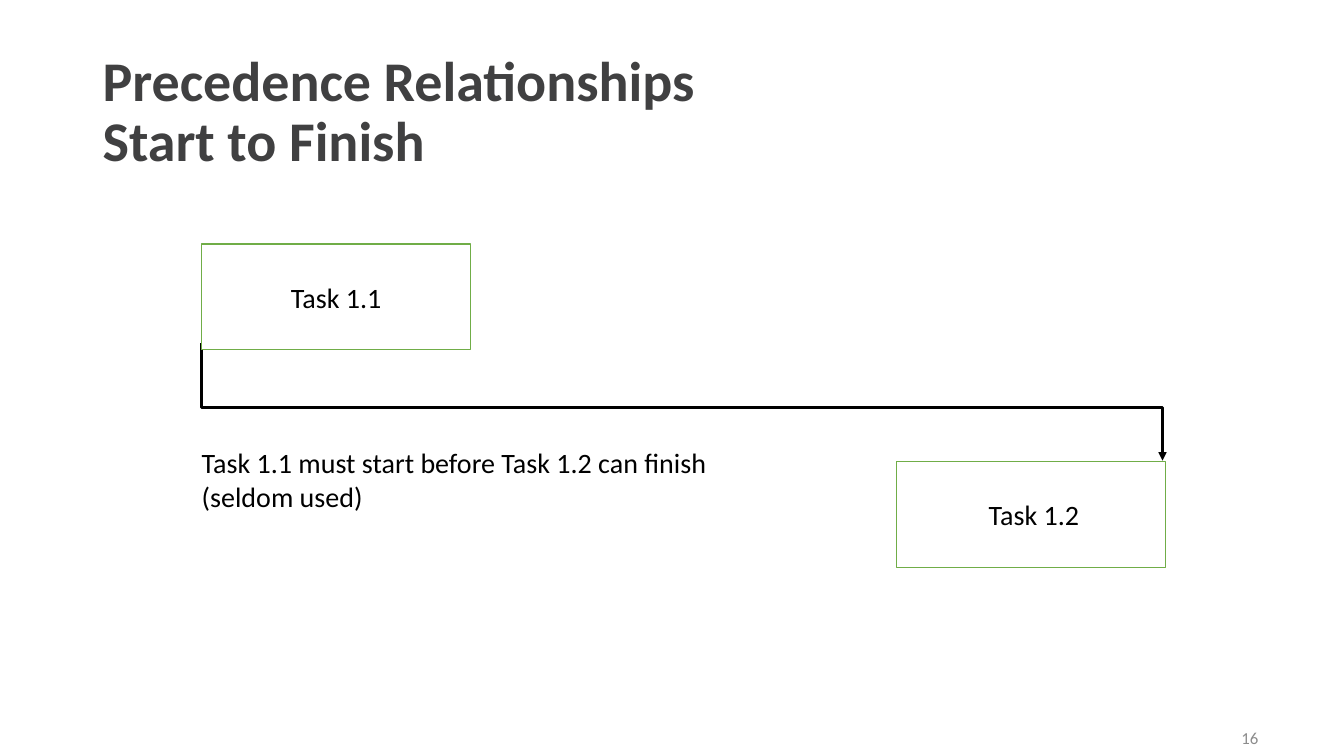
from lxml import etree
from pptx import Presentation
from pptx.dml.color import RGBColor
from pptx.enum.shapes import MSO_SHAPE
from pptx.enum.text import MSO_ANCHOR, PP_ALIGN
from pptx.oxml.ns import qn
from pptx.util import Inches, Pt

RECTANGLE = MSO_SHAPE.RECTANGLE
TOP, MIDDLE = MSO_ANCHOR.TOP, MSO_ANCHOR.MIDDLE
LEFT, CENTER, RIGHT = PP_ALIGN.LEFT, PP_ALIGN.CENTER, PP_ALIGN.RIGHT

WHITE = RGBColor(0xFF, 0xFF, 0xFF)
BLACK = RGBColor(0x00, 0x00, 0x00)
GREEN = RGBColor(0x70, 0xAD, 0x47)
DARK_GRAY = RGBColor(0x40, 0x40, 0x41)
LIGHT_GRAY = RGBColor(0x8C, 0x8C, 0x8C)

TASK_WIDTH, TASK_HEIGHT = 2.67, 1.05


def write_text(frame, text, size=20, color=BLACK, bold=False, align=LEFT,
               anchor=TOP, insets=(0, 0, 0, 0), line_spacing=None):
    """Fill a text frame with one formatted paragraph."""
    frame.word_wrap = True
    frame.vertical_anchor = anchor
    (frame.margin_left, frame.margin_top,
     frame.margin_right, frame.margin_bottom) = map(Inches, insets)
    para = frame.paragraphs[0]
    para.text = text
    para.alignment = align
    para.line_spacing = line_spacing
    for span in para.runs:
        span.font.name = "Calibri"
        span.font.size = Pt(size)
        span.font.bold = bold
        span.font.color.rgb = color


class SlideBuilder:
    """Holds the current slide and the style of its elements."""

    text_insets = (0.1, 0.05, 0.1, 0.05)

    def __init__(self, page):
        self.page = page

    def text(self, left, top, width, height, text, **style):
        box = self.page.shapes.add_textbox(*map(Inches, (left, top, width, height)))
        write_text(box.text_frame, text, **style)

    def task(self, left, top, name, **style):
        box = self.page.shapes.add_shape(
            RECTANGLE, *map(Inches, (left, top, TASK_WIDTH, TASK_HEIGHT)))
        box.shadow.inherit = False
        box.fill.solid()
        box.fill.fore_color.rgb = WHITE
        box.line.color.rgb = GREEN
        box.line.width = Pt(1)
        write_text(box.text_frame, name, align=CENTER, anchor=MIDDLE, **style)

    def arrow(self, points):
        start, *rest = [(Inches(x), Inches(y)) for x, y in points]
        builder = self.page.shapes.build_freeform(*start)
        builder.add_line_segments(rest, close=False)
        arrow = builder.convert_to_shape()
        arrow.shadow.inherit = False
        arrow.fill.background()
        arrow.line.color.rgb = BLACK
        arrow.line.width = Pt(2)
        outline = arrow.element.spPr.find(qn("a:ln"))
        etree.SubElement(outline, qn("a:tailEnd"), type="triangle")


def main():
    deck = Presentation()
    deck.slide_width, deck.slide_height = Inches(13.33), Inches(7.5)
    slide = SlideBuilder(deck.slides.add_slide(deck.slide_layouts[6]))

    # Title
    slide.text(0.92, 0.4, 11.5, 1.45, "Precedence Relationships\nStart to Finish",
               size=40, color=DARK_GRAY, bold=True, anchor=MIDDLE,
               insets=slide.text_insets, line_spacing=0.9)

    # Start-to-finish dependency
    slide.arrow([(2, 3.4), (2, 4.04), (11.53, 4.04), (11.53, 4.57)])
    slide.text(2, 4.42, 5.22, 1.36,
               "Task 1.1 must start before Task 1.2 can finish (seldom used)")
    slide.task(8.89, 4.58, "Task 1.2", insets=(0.06, 0, 0, 0))
    slide.task(2, 2.42, "Task 1.1")

    # Page number
    slide.text(9.58, 7.12, 3, 0.4, "16", size=12, color=LIGHT_GRAY, align=RIGHT,
               anchor=MIDDLE, insets=slide.text_insets)

    deck.save("out.pptx")


if __name__ == "__main__":
    main()
